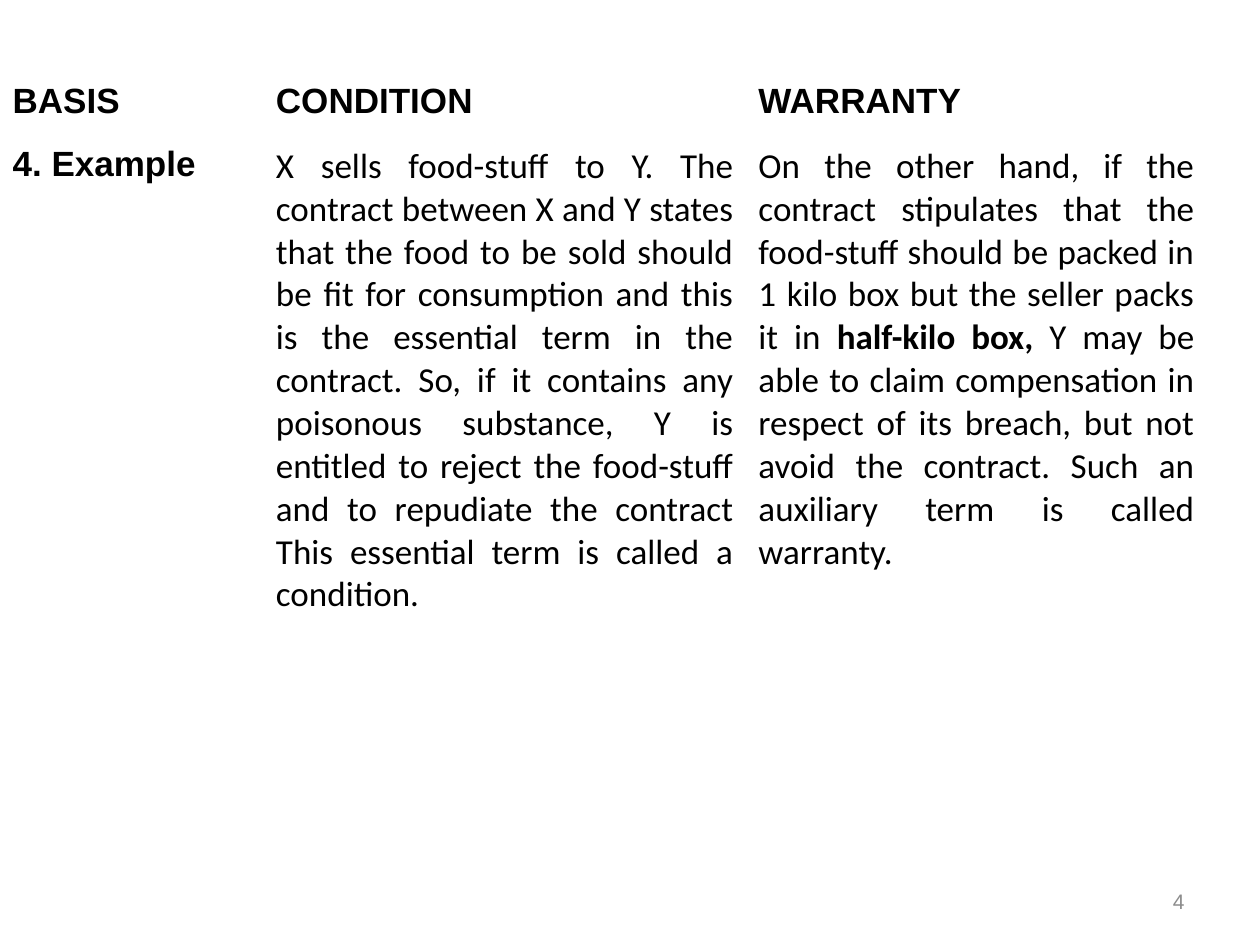
from pptx import Presentation
from pptx.dml.color import RGBColor
from pptx.enum.text import MSO_ANCHOR, PP_ALIGN
from pptx.oxml import parse_xml
from pptx.oxml.ns import nsdecls
from pptx.util import Pt

JUSTIFY, RIGHT = PP_ALIGN.JUSTIFY, PP_ALIGN.RIGHT
TOP, MIDDLE = MSO_ANCHOR.TOP, MSO_ANCHOR.MIDDLE

COLORS = {"text": "000000", "paper": "FFFFFF", "number": "8C8C8C"}

# Run formats
HEADING = {"name": "Arial", "size": Pt(20), "bold": True}
BODY = {"name": "Calibri", "size": Pt(20), "bold": False}
STRONG = {**BODY, "bold": True}
NUMBER = {"name": "Arial", "size": Pt(12), "bold": False}

# Content: each cell is a list of (text, format) runs
ROWS = [
    [[("BASIS", HEADING)], [("CONDITION", HEADING)], [("WARRANTY", HEADING)]],
    [
        [("4. Example", HEADING)],
        [("X sells food-stuff to Y. The contract between X and Y states that "
          "the food to be sold should be fit for consumption and this is the "
          "essential term in the contract. So, if it contains any poisonous "
          "substance, Y is entitled to reject the food-stuff and to repudiate "
          "the contract This essential term is called a condition. ", BODY)],
        [("On the other hand, if the contract stipulates that the food-stuff "
          "should be packed in 1 kilo box but the seller packs it in ", BODY),
         ("half-kilo box,", STRONG),
         (" Y may be able to claim compensation in respect of its breach, but "
          "not avoid the contract. Such an auxiliary term is called "
          "warranty. ", BODY)],
    ],
]
PAGE_NUMBER = [("4", NUMBER)]

# Geometry in points
SLIDE_SIZE = (720, 540)
TABLE_LEFT, TABLE_TOP = 0, 36
COLUMN_WIDTHS = [150.5, 275.75, 263.5]
ROW_HEIGHTS = [43.2, 293]
NUMBER_BOX = (516, 500.5, 168, 28.75)
THIN, THICK = 1, 3


def write(frame, runs, align, color):
    paragraph = frame.paragraphs[0]
    paragraph.alignment = align
    for text, style in runs:
        run = paragraph.add_run()
        run.text = text
        run.font.color.rgb = RGBColor.from_string(COLORS[color])
        for key, value in style.items():
            setattr(run.font, key, value)


def add_borders(cell, widths):
    properties = cell._tc.get_or_add_tcPr()
    for position, (side, width) in enumerate(widths.items()):
        properties.insert(position, parse_xml(
            f'<a:{side} {nsdecls("a")} w="{Pt(width)}"><a:solidFill>'
            f'<a:srgbClr val="{COLORS["paper"]}"/></a:solidFill></a:{side}>'))


prs = Presentation()
prs.slide_width, prs.slide_height = map(Pt, SLIDE_SIZE)
slide = prs.slides.add_slide(prs.slide_layouts[6])

# Page number
number_box = slide.shapes.add_textbox(*map(Pt, NUMBER_BOX)).text_frame
number_box.word_wrap = True
number_box.vertical_anchor = MIDDLE
write(number_box, PAGE_NUMBER, RIGHT, "number")

# Comparison table
comparison = slide.shapes.add_table(
    len(ROWS), len(COLUMN_WIDTHS), Pt(TABLE_LEFT), Pt(TABLE_TOP),
    Pt(sum(COLUMN_WIDTHS)), Pt(sum(ROW_HEIGHTS))).table
for column, width in zip(comparison.columns, COLUMN_WIDTHS):
    column.width = Pt(width)
for row, height in zip(comparison.rows, ROW_HEIGHTS):
    row.height = Pt(height)

for r, contents in enumerate(ROWS):
    is_header = r == 0
    for c, runs in enumerate(contents):
        cell = comparison.cell(r, c)
        cell.fill.solid()
        cell.fill.fore_color.rgb = RGBColor.from_string(COLORS["paper"])
        cell.vertical_anchor = MIDDLE if is_header else TOP
        write(cell.text_frame, runs, JUSTIFY, "text")
        add_borders(cell, {"lnL": THIN, "lnR": THIN,
                           "lnT": THIN if is_header else THICK,
                           "lnB": THICK if is_header else THIN})

prs.save("out.pptx")
